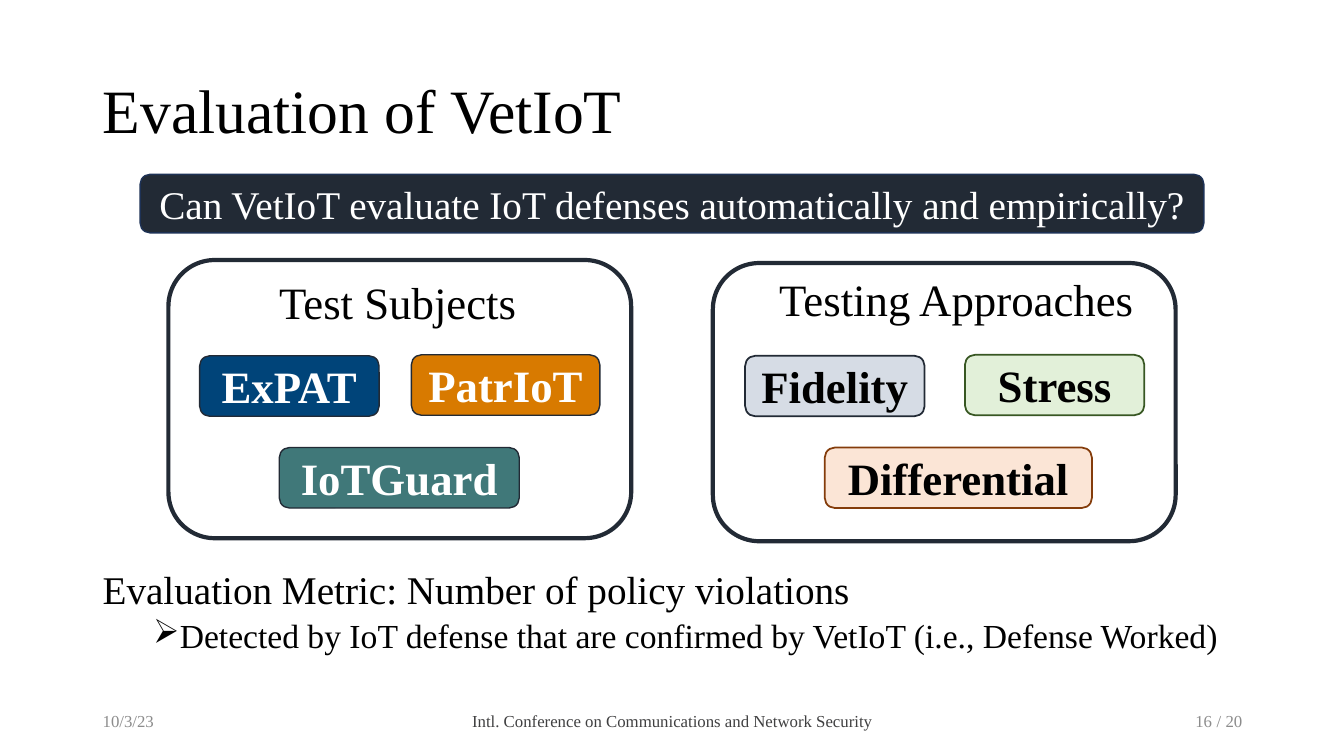
from dataclasses import dataclass

from lxml import etree
from pptx import Presentation
from pptx import util as u
from pptx.dml.color import RGBColor
from pptx.enum import shapes, text
from pptx.oxml import ns

PX = 9144


@dataclass(frozen=True)
class Theme:
    font: str = "Times New Roman"
    ink: str = "000000"
    paper: str = "FFFFFF"
    navy: str = "222A35"
    banner_edge: str = "1E3256"
    muted: str = "8C8C8C"
    venue: str = "404041"
    title: int = 44
    heading: int = 32
    body: int = 28
    detail: int = 24
    footer: int = 12


theme = Theme()
LEFT, CENTER, RIGHT = text.PP_ALIGN.LEFT, text.PP_ALIGN.CENTER, text.PP_ALIGN.RIGHT

deck = Presentation()
deck.slide_width, deck.slide_height = 1333 * PX, 750 * PX
slide = deck.slides.add_slide(deck.slide_layouts[6])


def write(holder, lines, size, color, align=LEFT, bold=False, middle=True, wrap=True):
    frame = holder.text_frame
    frame.word_wrap = wrap
    frame.vertical_anchor = text.MSO_ANCHOR.MIDDLE if middle else text.MSO_ANCHOR.TOP
    frame.text = lines
    for paragraph in frame.paragraphs:
        paragraph.alignment = align
        paragraph.font.name = theme.font
        paragraph.font.size = u.Pt(size)
        paragraph.font.bold = bold
        paragraph.font.color.rgb = RGBColor.from_string(color)
    return frame.paragraphs


def rounded(box, fill, edge, weight):
    shape = slide.shapes.add_shape(
        shapes.MSO_SHAPE.ROUNDED_RECTANGLE, *(side * PX for side in box))
    shape.shadow.inherit = False
    if fill:
        shape.fill.solid()
        shape.fill.fore_color.rgb = RGBColor.from_string(fill)
    else:
        shape.fill.background()
    shape.line.color.rgb = RGBColor.from_string(edge)
    shape.line.width = u.Pt(weight)
    return shape


title = slide.shapes.add_textbox(92 * PX, 40 * PX, 1150 * PX, 145 * PX)
write(title, "Evaluation of VetIoT", theme.title, theme.ink)[0].line_spacing = 0.9

footers = [
    (92, 300, "10/3/23", LEFT, theme.muted),
    (425, 484, "Intl. Conference on Communications and Network Security", CENTER, theme.venue),
    (942, 270, "16", RIGHT, theme.muted),
    (1193, 49, "/ 20", RIGHT, theme.muted),
]
for left, width, words, align, color in footers:
    footer = slide.shapes.add_textbox(left * PX, 695 * PX, width * PX, 40 * PX)
    write(footer, words, theme.footer, color, align)

metric = slide.shapes.add_textbox(92 * PX, 561 * PX, 1150 * PX, 113 * PX)
measure, detail = write(
    metric,
    "Evaluation Metric: Number of policy violations\n"
    "Detected by IoT defense that are confirmed by VetIoT (i.e., Defense Worked)",
    theme.body, theme.ink, middle=False)
measure.line_spacing = detail.line_spacing = 0.9
measure.space_before, detail.space_before = u.Pt(10), u.Pt(5)
detail.level = 1
detail.font.size = u.Pt(theme.detail)
detail_format = detail._p.get_or_add_pPr()
detail_format.set("marL", str(75 * PX))
detail_format.set("indent", str(-25 * PX))
bullet = etree.Element(ns.qn("a:buChar"), char="➢")
detail_format.find(ns.qn("a:defRPr")).addprevious(bullet)

banner = rounded((139, 173, 1055, 58), theme.navy, theme.banner_edge, 1)
write(banner, "Can VetIoT evaluate IoT defenses automatically and empirically?",
      theme.body, theme.paper, CENTER)

panels = [
    ((167, 258), (267, 268, 258), "Test Subjects", theme.paper, 1, [
        ("ExPAT", 198, 353, 178, "004479", theme.navy),
        ("PatrIoT", 408, 352, 187, "D87A00", theme.navy),
        ("IoTGuard", 277, 444, 238, "407879", theme.navy),
    ]),
    ((707, 261), (763, 265, 375), "Testing Approaches", theme.ink, 1.25, [
        ("Fidelity", 739, 353, 178, "D6DCE5", theme.navy),
        ("Stress", 957, 352, 178, "E2F0D9", "385723"),
        ("Differential", 818, 444, 265, "FBE5D6", "843C0B"),
    ]),
]
for corner, (left, top, width), heading, chip_ink, weight, chips in panels:
    rounded((*corner, 459, 276), None, theme.navy, 3)
    caption = slide.shapes.add_textbox(left * PX, top * PX, width * PX, 64 * PX)
    write(caption, heading, theme.heading, theme.ink, middle=False, wrap=False)
    for label, chip_left, chip_top, chip_width, fill, edge in chips:
        chip = rounded((chip_left, chip_top, chip_width, 60), fill, edge, weight)
        write(chip, label, theme.heading, chip_ink, CENTER, bold=True)

deck.save("out.pptx")
